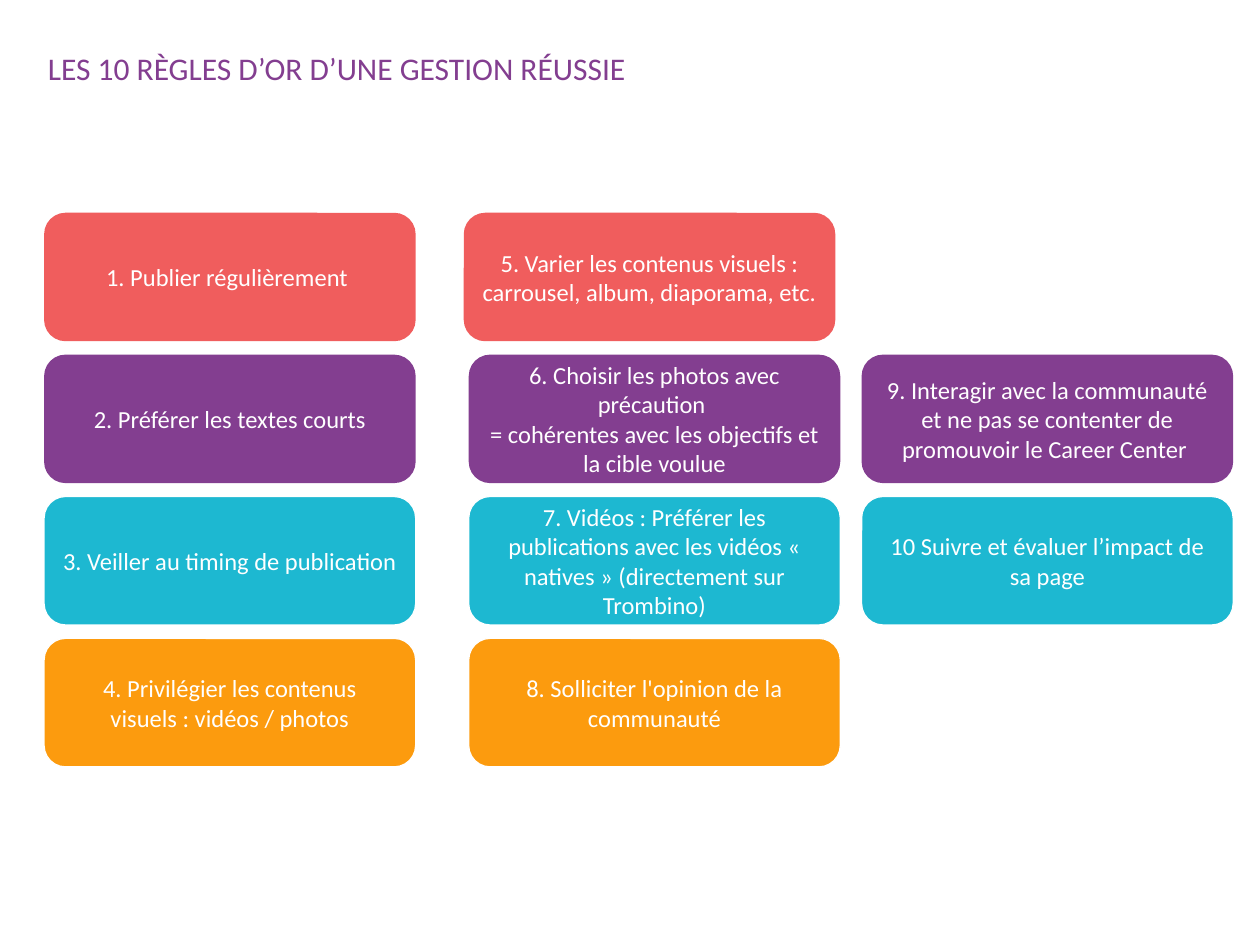
from pptx import Presentation
from pptx.dml.color import RGBColor
from pptx.enum.shapes import MSO_SHAPE
from pptx.enum.text import MSO_ANCHOR, MSO_AUTO_SIZE, PP_ALIGN
from pptx.util import Cm, Pt

ROUND = MSO_SHAPE.ROUNDED_RECTANGLE
TOP, MIDDLE = MSO_ANCHOR.TOP, MSO_ANCHOR.MIDDLE
LEFT, CENTER = PP_ALIGN.LEFT, PP_ALIGN.CENTER
NO_FIT = MSO_AUTO_SIZE.NONE

FONT = "Calibri"
COLORS = {
    "red": "F05D5D",
    "purple": "833E90",
    "teal": "1DB8D1",
    "orange": "FC9B0E",
    "white": "FFFFFF",
}
ROWS = ["red", "purple", "teal", "orange"]
EDGED = {"teal", "orange"}

WIDTH, HEIGHT = 7.49, 2.59
FIRST, STEP = 4.29, 2.86
RULES = [
    (0.89, 0, "1. Publier régulièrement "),
    (0.89, 1, "2. Préférer les textes courts"),
    (0.89, 2, "3. Veiller au timing de publication"),
    (0.89, 3, "4. Privilégier les contenus visuels : vidéos / photos"),
    (9.35, 0, "5. Varier les contenus visuels : carrousel, album, diaporama, etc. "),
    (9.45, 1, "6. Choisir les photos avec précaution \n"
              "= cohérentes avec les objectifs et la cible voulue"),
    (9.45, 2, "7. Vidéos : Préférer les publications avec les vidéos "
              "« natives » (directement sur Trombino)"),
    (9.45, 3, "8. Solliciter l'opinion de la communauté"),
    (17.37, 1, "9. Interagir avec la communauté et ne pas se contenter de "
               "promouvoir le Career Center "),
    (17.37, 2, "10 Suivre et évaluer l’impact de sa page"),
]


def color(name):
    return RGBColor.from_string(COLORS[name])


def write(shape, text, size, ink, align, anchor):
    frame = shape.text_frame
    frame.text = text
    frame.word_wrap = True
    frame.auto_size = NO_FIT
    frame.vertical_anchor = anchor
    for para in frame.paragraphs:
        para.alignment = align
        for run in para.runs:
            run.font.name = FONT
            run.font.size = Pt(size)
            run.font.color.rgb = color(ink)


def add_title(slide, text):
    title = slide.shapes.title
    title.left, title.top = Cm(0.71), Cm(0.86)
    title.width, title.height = Cm(21.67), Cm(1.8)
    write(title, text, 18, "purple", LEFT, TOP)


def add_rule(slide, left, row, text):
    tone = ROWS[row]
    box = slide.shapes.add_shape(
        ROUND, Cm(left), Cm(FIRST + row * STEP), Cm(WIDTH), Cm(HEIGHT))
    box.shadow.inherit = False
    box.fill.solid()
    box.fill.fore_color.rgb = color(tone)
    if tone in EDGED:
        box.line.color.rgb = color("white")
        box.line.width = Pt(0.75)
    else:
        box.line.fill.background()
    write(box, text, 14, "white", CENTER, MIDDLE)


def main():
    deck = Presentation()
    deck.slide_width, deck.slide_height = Cm(25.4), Cm(19.05)
    slide = deck.slides.add_slide(deck.slide_layouts[5])
    add_title(slide, "LES 10 RÈGLES D’OR D’UNE GESTION RÉUSSIE")
    for left, row, text in RULES:
        add_rule(slide, left, row, text)
    deck.save("out.pptx")


if __name__ == "__main__":
    main()
